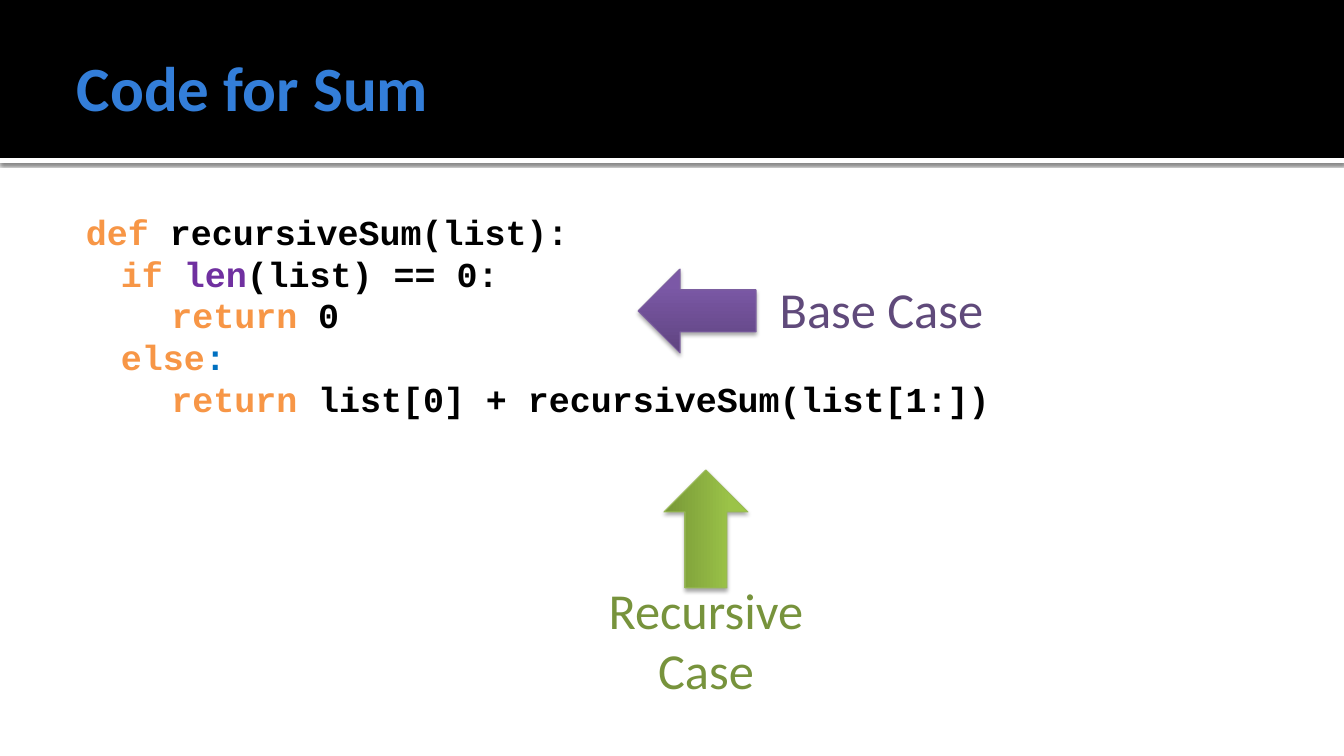
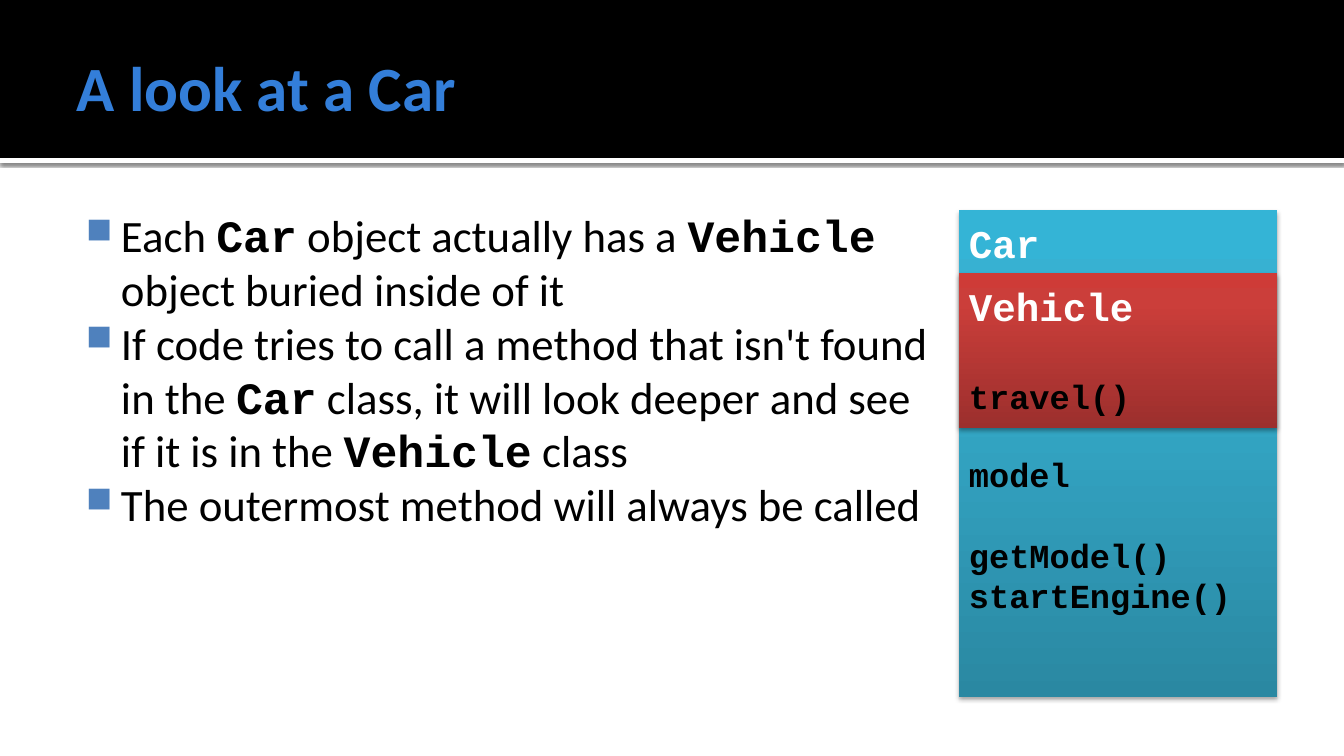
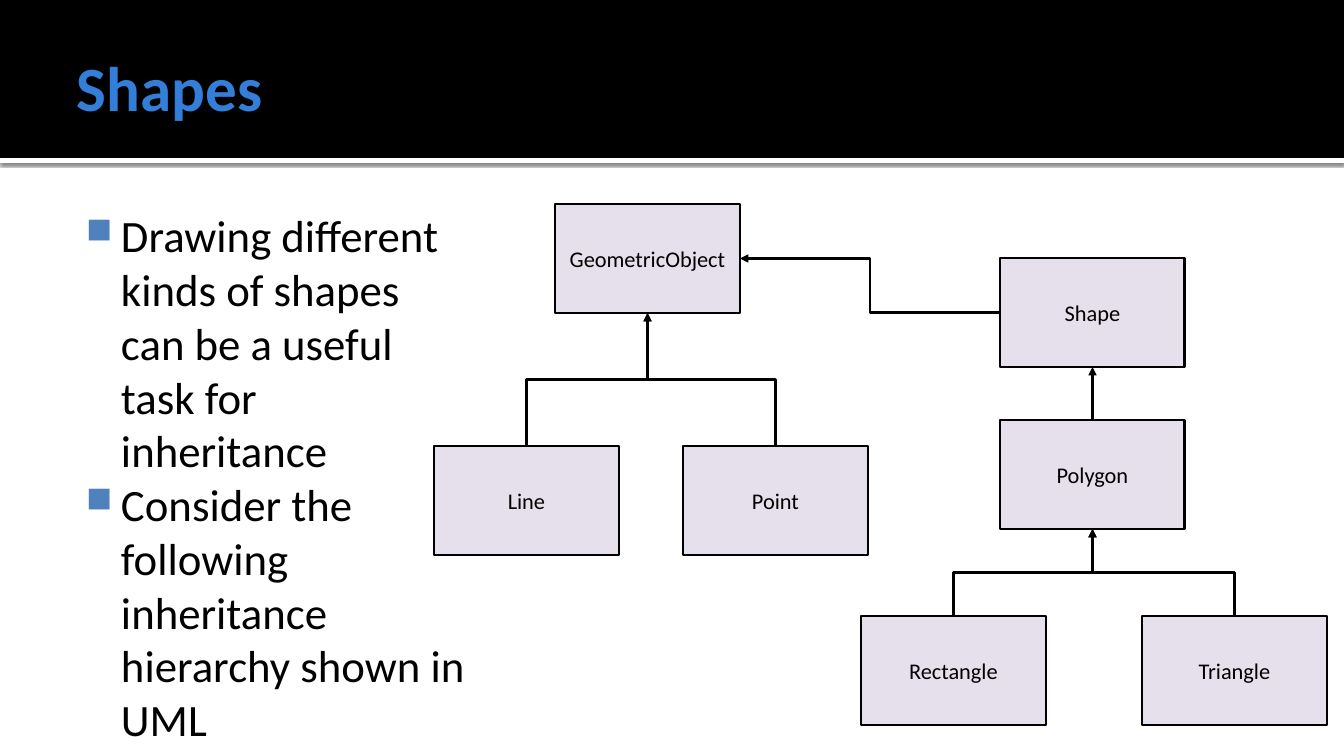
from lxml import etree
from pptx import Presentation
from pptx.dml.color import RGBColor
from pptx.enum.shapes import MSO_CONNECTOR, MSO_SHAPE
from pptx.enum.text import MSO_ANCHOR, PP_ALIGN
from pptx.oxml.ns import qn
from pptx.util import Pt

PX = 914400 / 100.8
RECTANGLE = MSO_SHAPE.RECTANGLE
LEFT_ARROW = MSO_SHAPE.LEFT_ARROW
ELBOW, STRAIGHT = MSO_CONNECTOR.ELBOW, MSO_CONNECTOR.STRAIGHT
TOP, MIDDLE = MSO_ANCHOR.TOP, MSO_ANCHOR.MIDDLE
LEFT, CENTER = PP_ALIGN.LEFT, PP_ALIGN.CENTER
SITE_TOP, SITE_LEFT, SITE_BOTTOM, SITE_RIGHT = range(4)

COLORS = {
    "black": "000000", "white": "FFFFFF", "title": "337ED9", "bullet": "4F81BD",
    "keyword": "F79646", "builtin": "7030A0", "colon": "0070C0",
    "base": "604A7B", "base line": "7D60A0",
    "recursive": "77933C", "recursive line": "98B955", "class": "E6E0EC",
}
GRADIENTS = {
    "purple": ["5F4480", "7B58A6", "7C57A8"],
    "green": ["779737", "9BC348", "9DC746"],
    "teal": ["2A88A2", "37B1D2", "34B4D6"],
    "red": ["9C2F2D", "CB3E3A", "CE3B37"],
}
GRADIENT_STOPS = [0, 80, 100]
# Shadow values: opacity in percent, blur and distance in points
BAND_SHADOW = (60, 2.5, 0.8)
SHAPE_SHADOW = (35, 3.1, 1.8)

SANS, MONO = "Calibri", "Courier New"
FORMATS = {
    "title": ({"name": SANS, "size": Pt(45), "bold": True}, "title"),
    "body": ({"name": SANS, "size": Pt(32), "bold": False}, "black"),
    "body code": ({"name": MONO, "size": Pt(32), "bold": True}, "black"),
    "class name": ({"name": MONO, "size": Pt(28), "bold": True}, "white"),
    "member": ({"name": MONO, "size": Pt(24), "bold": True}, "black"),
    "node": ({"name": SANS, "size": Pt(16), "bold": False}, "black"),
}
for case in ("base", "recursive"):
    FORMATS[case] = ({"name": SANS, "size": Pt(36), "bold": False}, case)
for token in ("black", "keyword", "builtin", "colon"):
    FORMATS[token] = ({"name": MONO, "size": Pt(25), "bold": True}, token)

LEADING = 1.2
BODY_INSETS = (6, 10, 10, 5)
HANGING = {"marL": 48, "indent": -35}


def write_text(box, paragraphs, insets=(10, 5, 10, 5), anchor=TOP, align=LEFT,
               leading=None, hanging=False, bullets=False, gaps=()):
    """Fill a box with paragraphs, each a list of (text, format name) spans."""
    frame = box.text_frame
    frame.word_wrap = True
    frame.vertical_anchor = anchor
    for side, inset in zip(("left", "top", "right", "bottom"), insets):
        setattr(frame, "margin_" + side, round(inset * PX))
    for index, spans in enumerate(paragraphs):
        para = frame.add_paragraph() if index else frame.paragraphs[0]
        properties = para._p.get_or_add_pPr()
        if hanging:
            for name, length in HANGING.items():
                properties.set(name, str(round(length * PX)))
        if bullets:
            color = etree.SubElement(properties, qn("a:buClr"))
            etree.SubElement(color, qn("a:srgbClr"), val=COLORS["bullet"])
            etree.SubElement(properties, qn("a:buSzPct"), val="80000")
            etree.SubElement(properties, qn("a:buChar"), char="■")
        para.alignment = align
        if leading:
            size = FORMATS[spans[0][1]][0]["size"].pt
            para.line_spacing = Pt(size * leading)
        if gaps and gaps[index]:
            para.space_before = Pt(gaps[index])
        for text, format_name in spans:
            span = para.add_run()
            span.text = text
            values, color_name = FORMATS[format_name]
            for name, value in values.items():
                setattr(span.font, name, value)
            span.font.color.rgb = RGBColor.from_string(COLORS[color_name])


def add_box(page, kind, frame, fill, line=None, width=0.75, shadow=None):
    """Add a preset shape with a plain or gradient fill; frame is in px."""
    shape = page.shapes.add_shape(kind, *[round(length * PX) for length in frame])
    if fill in GRADIENTS:
        shape.fill.gradient()
        shape.fill.gradient_angle = 90
        stops = shape.element.spPr.find(".//" + qn("a:gsLst"))
        for stop in list(stops):
            stops.remove(stop)
        for position, color in zip(GRADIENT_STOPS, GRADIENTS[fill]):
            stop = etree.SubElement(stops, qn("a:gs"), pos=str(position * 1000))
            etree.SubElement(stop, qn("a:srgbClr"), val=color)
    else:
        shape.fill.solid()
        shape.fill.fore_color.rgb = RGBColor.from_string(COLORS[fill])
    if line:
        shape.line.color.rgb = RGBColor.from_string(COLORS[line])
        shape.line.width = Pt(width)
    else:
        shape.line.fill.background()
    shape.shadow.inherit = False
    if shadow:
        opacity, blur, distance = shadow
        effects = shape.element.spPr.find(qn("a:effectLst"))
        outer = etree.SubElement(effects, qn("a:outerShdw"), blurRad=str(Pt(blur)),
                                 dist=str(Pt(distance)), dir="5400000", rotWithShape="0")
        color = etree.SubElement(outer, qn("a:srgbClr"), val=COLORS["black"])
        etree.SubElement(color, qn("a:alpha"), val=str(opacity * 1000))
    return shape


deck = Presentation()
deck.slide_width, deck.slide_height = round(1344 * PX), round(756 * PX)

# Pages with the shared bands, title and body text
code = [
    [("def ", "keyword"), ("recursiveSum(list):", "black")],
    [("\t", "black"), ("if ", "keyword"), ("len", "builtin"), ("(list) == 0:", "black")],
    [("\t\t", "black"), ("return", "keyword"), (" 0", "black")],
    [("\t", "black"), ("else", "keyword"), (":", "colon")],
    [("\t\t", "black"), ("return", "keyword"),
     (" list[0] + recursiveSum(list[1:])", "black")],
]
car_points = [
    [("Each ", "body"), ("Car", "body code"), (" object actually has a ", "body"),
     ("Vehicle", "body code"), (" object buried inside of it", "body")],
    [("If code tries to call a method that isn't found in the ", "body"),
     ("Car", "body code"),
     (" class, it will look deeper and see if it is in the ", "body"),
     ("Vehicle", "body code"), (" class", "body")],
    [("The outermost method will always be called", "body")],
]
shape_points = [
    [("Drawing different kinds of shapes can be a useful task for inheritance", "body")],
    [("Consider the following inheritance hierarchy shown in UML", "body")],
]
pages = []
for title, body, top, width, bullets in (
    ("Code for Sum", code, 200, 1210, False),
    ("A look at a Car", car_points, 198, 874, True),
    ("Shapes", shape_points, 198, 411, True),
):
    page = deck.slides.add_slide(deck.slide_layouts[6])
    add_box(page, RECTANGLE, (0, 158, 1344, 5), "white", shadow=BAND_SHADOW)
    add_box(page, RECTANGLE, (0, 0, 1344, 158), "black")
    box = page.shapes.add_textbox(*[round(n * PX) for n in (67, 17, 1210, 138)])
    write_text(box, [[(title, "title")]], insets=(10, 5, 5, 5), anchor=MIDDLE)
    box = page.shapes.add_textbox(*[round(n * PX) for n in (67, top, width, 510)])
    write_text(box, body, insets=BODY_INSETS, leading=LEADING, hanging=True,
               bullets=bullets)
    pages.append(page)
sum_page, car_page, shapes_page = pages

# Sum: arrows and labels for the two cases
for case, fill, arrow_frame, turn, label_frame, lines in (
    ("base", "purple", (638, 269, 118, 84), 0, (739, 273, 285, 72), ["Base Case"]),
    ("recursive", "green", (647, 487, 118, 84), 90, (521, 574, 370, 132),
     ["Recursive", "Case"]),
):
    arrow = add_box(sum_page, LEFT_ARROW, arrow_frame, fill, line=case + " line",
                    shadow=SHAPE_SHADOW)
    arrow.rotation = turn
    label = sum_page.shapes.add_textbox(*[round(n * PX) for n in label_frame])
    write_text(label, [[(text, case)] for text in lines], align=CENTER)

# Car: the Vehicle object inside the Car object
name_line, member_line = 28 * LEADING, 24 * LEADING
for fill, top, height, name, members, gaps in (
    ("teal", 210, 487, "Car", ["model", "getModel()", "startEngine()"],
     [0, 4 * name_line, member_line, 0]),
    ("red", 273, 155, "Vehicle", ["travel()"], [0, name_line]),
):
    box = add_box(car_page, RECTANGLE, (959, top, 318, height), fill,
                  shadow=SHAPE_SHADOW)
    lines = [[(name, "class name")]] + [[(member, "member")] for member in members]
    write_text(box, lines, insets=(10, 9, 10, 5), leading=LEADING, gaps=gaps)

# Shapes: class boxes
nodes = {}
for name, left, top in (
    ("GeometricObject", 555, 204), ("Line", 434, 446), ("Point", 683, 446),
    ("Shape", 1000, 258), ("Polygon", 1000, 420),
    ("Rectangle", 861, 616), ("Triangle", 1142, 616),
):
    nodes[name] = add_box(shapes_page, RECTANGLE, (left, top, 185, 109), "class",
                          line="black", width=2)
    write_text(nodes[name], [[(name, "node")]], anchor=MIDDLE, align=CENTER)

# Shapes: inheritance arrows from child to parent
for child, parent, kind, start, end in (
    ("Line", "GeometricObject", ELBOW, SITE_TOP, SITE_BOTTOM),
    ("Point", "GeometricObject", ELBOW, SITE_TOP, SITE_BOTTOM),
    ("Shape", "GeometricObject", ELBOW, SITE_LEFT, SITE_RIGHT),
    ("Rectangle", "Polygon", ELBOW, SITE_TOP, SITE_BOTTOM),
    ("Triangle", "Polygon", ELBOW, SITE_TOP, SITE_BOTTOM),
    ("Polygon", "Shape", STRAIGHT, SITE_TOP, SITE_BOTTOM),
):
    link = shapes_page.shapes.add_connector(kind, 0, 0, 0, 0)
    link.begin_connect(nodes[child], start)
    link.end_connect(nodes[parent], end)
    link.line.color.rgb = RGBColor.from_string(COLORS["black"])
    link.line.width = Pt(2)
    properties = link.element.spPr
    etree.SubElement(properties.find(qn("a:ln")), qn("a:tailEnd"), type="triangle")
    etree.SubElement(properties, qn("a:effectLst"))
    if kind == ELBOW and start == SITE_TOP:
        # An elbow that leaves upwards is a turned frame around the same centre
        rightward = link.begin_x < link.end_x
        middle_x = (link.begin_x + link.end_x) // 2
        middle_y = (link.begin_y + link.end_y) // 2
        link.width, link.height = link.height, link.width
        link.left = middle_x - link.width // 2
        link.top = middle_y - link.height // 2
        turned = properties.find(qn("a:xfrm"))
        turned.set("rot", "5400000" if rightward else "16200000")
        turned.set("flipH", "1" if rightward else "0")
        turned.set("flipV", "1")

deck.save("out.pptx")
